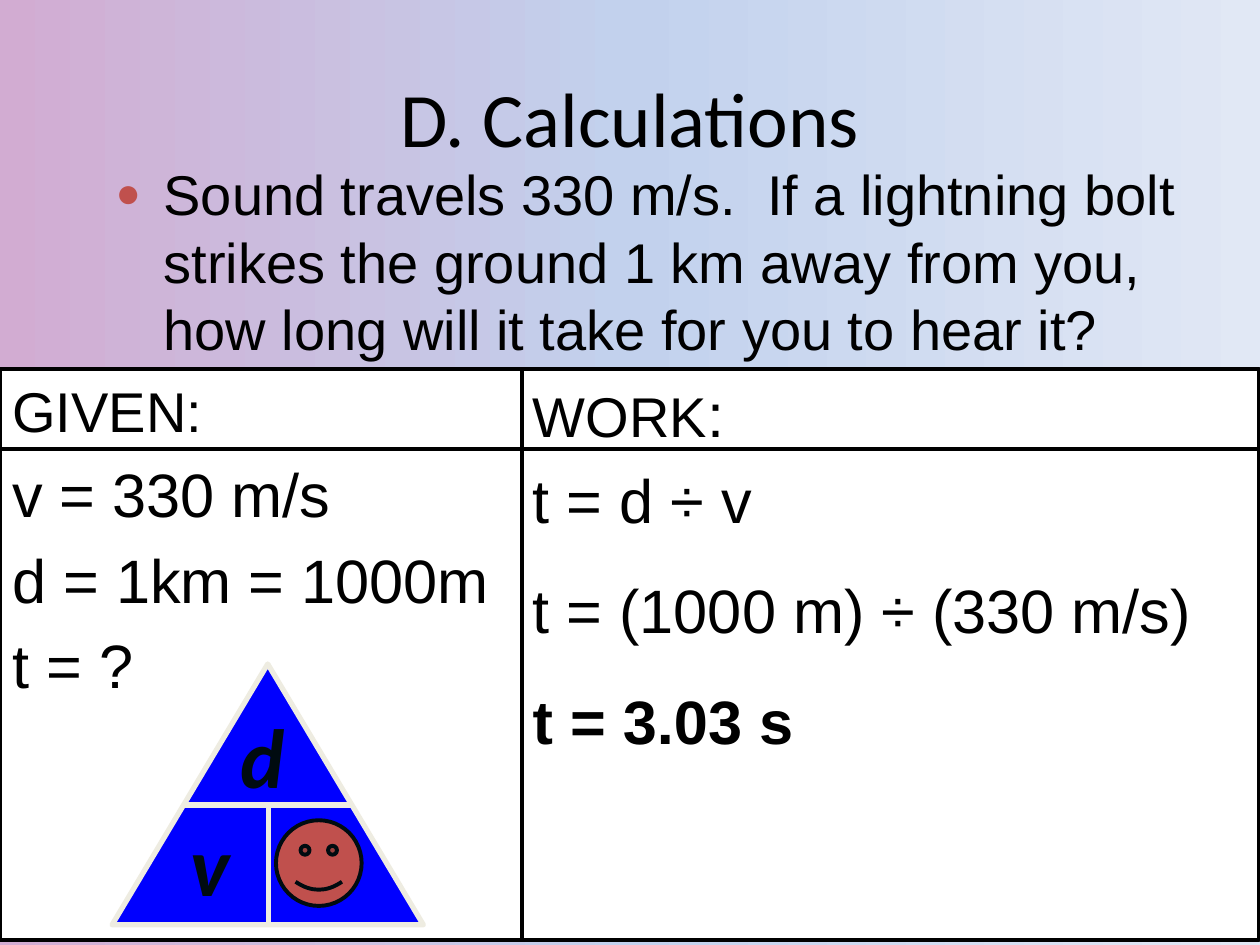
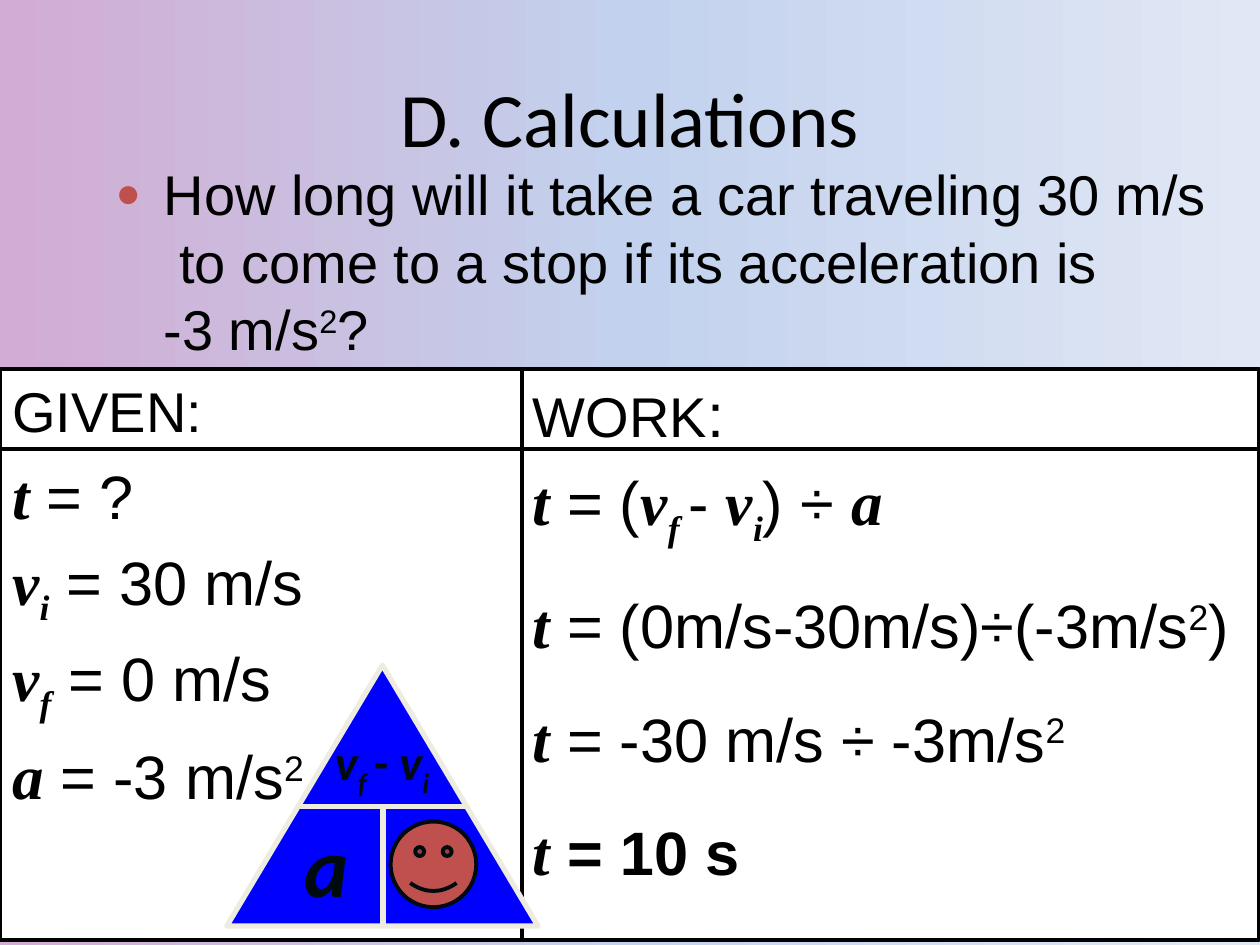
from copy import deepcopy

from pptx import Presentation
from pptx.dml.color import RGBColor
from pptx.enum.shapes import MSO_CONNECTOR, MSO_SHAPE
from pptx.enum.text import MSO_ANCHOR, MSO_AUTO_SIZE, PP_ALIGN
from pptx.oxml.ns import qn
from pptx.oxml.xmlchemy import OxmlElement
from pptx.util import Inches, Pt

STRAIGHT = MSO_CONNECTOR.STRAIGHT
RECTANGLE = MSO_SHAPE.RECTANGLE
TRIANGLE = MSO_SHAPE.ISOSCELES_TRIANGLE
SMILEY = MSO_SHAPE.SMILEY_FACE
MIDDLE = MSO_ANCHOR.MIDDLE
CENTER = PP_ALIGN.CENTER
FIT_SHAPE = MSO_AUTO_SIZE.SHAPE_TO_FIT_TEXT

BACKGROUND = [(0, "D2ACD2"), (0.5, "C2D1ED"), (1, "E1E8F5")]
BLACK, WHITE, BLUE = "000000", "FFFFFF", "0000FF"
RED, CREAM, INK = "C0504D", "EEECE1", "000B10"

PANEL_TOP, PANEL_BOTTOM = 2.93, 7.46
HEADER_BOTTOM = 3.56
COLUMN_SPLIT = 4.14

TITLE = dict(size=44, font="Calibri")
QUESTION = dict(size=32, font="Arial")
BODY = dict(size=35, font="Arial")
RESULT = dict(BODY, bold=True)
VARIABLE = dict(size=36, font="Times New Roman", bold=True, italic=True)
VELOCITY = dict(VARIABLE, size=35)
SUBSCRIPT = dict(VELOCITY, baseline=-25)
LABEL = dict(size=48, font="Calibri", bold=True, italic=True, color=INK)
SMALL_LABEL = dict(LABEL, size=28)
SMALL_SUBSCRIPT = dict(SMALL_LABEL, baseline=-25)

TIME, ACCELERATION = ("t", VARIABLE), ("a", VARIABLE)
V, INITIAL, FINAL = ("v", VELOCITY), ("i", SUBSCRIPT), ("f", SUBSCRIPT)
SQUARED = ("2", dict(BODY, baseline=30))


def rgb(value):
    return RGBColor.from_string(value)


def add_element(parent, tag, **attributes):
    element = OxmlElement(tag)
    for name, value in attributes.items():
        element.set(name, str(value))
    parent.append(element)
    return element


def paint_background(slide):
    fill = slide.background.fill
    fill.gradient()
    fill.gradient_angle = 0
    stop_list = slide.element.find(".//" + qn("a:gsLst"))
    stop_list.insert(1, deepcopy(stop_list[0]))
    for stop, (position, color) in zip(fill.gradient_stops, BACKGROUND):
        stop.position = position
        stop.color.rgb = rgb(color)


def add_run(paragraph, text, size, font, bold=False, italic=False,
            color=BLACK, baseline=0):
    """Add a styled run; baseline is a percentage shift."""
    run = paragraph.add_run()
    run.text = text
    run.font.size = Pt(size)
    run.font.name = font
    run.font.bold = bold
    run.font.italic = italic
    run.font.color.rgb = rgb(color)
    if baseline:
        run.font._element.set("baseline", str(baseline * 1000))


def fill_paragraph(paragraph, runs, style):
    """Write runs: plain strings take the given style, pairs bring their own."""
    for item in runs:
        if item == "\v":
            paragraph.add_line_break()
            continue
        text, run_style = (item, style) if isinstance(item, str) else item
        add_run(paragraph, text, **run_style)


def add_text(shapes, left, top, width, height, lines, style, wrap=True):
    box = shapes.add_textbox(Inches(left), Inches(top), Inches(width), Inches(height))
    frame = box.text_frame
    frame.word_wrap = wrap
    for index, runs in enumerate(lines):
        paragraph = frame.add_paragraph() if index else frame.paragraphs[0]
        fill_paragraph(paragraph, runs, style)
    return frame


def add_shape(shapes, kind, left, top, width, height, fill, line, line_width):
    shape = shapes.add_shape(kind, Inches(left), Inches(top), Inches(width), Inches(height))
    shape.shadow.inherit = False
    shape.fill.solid()
    shape.fill.fore_color.rgb = rgb(fill)
    shape.line.color.rgb = rgb(line)
    shape.line.width = Pt(line_width)


def add_line(shapes, x1, y1, x2, y2, color, width):
    line = shapes.add_connector(STRAIGHT, Inches(x1), Inches(y1), Inches(x2), Inches(y2))
    line.line.color.rgb = rgb(color)
    line.line.width = Pt(width)
    add_element(line._element.spPr, "a:effectLst")


def add_title(slide):
    frame = add_text(slide.shapes, 0.5, 0.3, 9, 1.25, [["D. Calculations"]], TITLE)
    frame.vertical_anchor = MIDDLE
    frame.paragraphs[0].alignment = CENTER


def add_question(slide, runs):
    frame = add_text(slide.shapes, 0.82, 1.22, 8.91, 1.72, [runs], QUESTION)
    properties = frame.paragraphs[0]._p.get_or_add_pPr()
    properties.set("marL", str(Inches(0.38)))
    properties.set("indent", str(-Inches(0.38)))
    add_element(add_element(properties, "a:buClr"), "a:srgbClr", val=RED)
    add_element(properties, "a:buSzPct", val=75000)
    add_element(properties, "a:buFont", typeface="Arial")
    add_element(properties, "a:buChar", char="●")


def add_column(slide, left, width, height, lines, step_spacing):
    """Add a heading and its lines; step_spacing (%) applies from the third line."""
    frame = add_text(slide.shapes, left, 2.94, width, height, lines, BODY)
    for index, paragraph in enumerate(frame.paragraphs):
        percent = step_spacing if index > 1 else 20
        spacing = add_element(paragraph._p.get_or_add_pPr(), "a:spcBef")
        add_element(spacing, "a:spcPct", val=percent * 1000)


def add_solution_panel(slide, given, work):
    shapes = slide.shapes
    add_shape(shapes, RECTANGLE, 0, PANEL_TOP, 9.99, PANEL_BOTTOM - PANEL_TOP,
              WHITE, BLACK, 2.25)
    add_column(slide, 0, 4.13, 2.84, [[("GIVEN:", QUESTION)]] + given, 20)
    add_column(slide, 4.13, 5.87, 3.86, [[("WORK", QUESTION), ":"]] + work, 60)
    add_line(shapes, COLUMN_SPLIT, PANEL_TOP, COLUMN_SPLIT, PANEL_BOTTOM, BLACK, 2.25)
    add_line(shapes, 0, HEADER_BOTTOM, 10, HEADER_BOTTOM, BLACK, 2.25)


def add_formula_triangle(slide, left, top, bottom_label):
    """Draw the triangle with a smiley over the unknown; return its group's shapes."""
    shapes = slide.shapes.add_group_shape().shapes
    bar = top + 1.12
    stem = left + 1.24
    add_shape(shapes, TRIANGLE, left, top, 2.47, 2.07, BLUE, CREAM, 3)
    add_line(shapes, left + 0.56, bar, left + 1.9, bar, CREAM, 3)
    add_line(shapes, stem, bar, stem, top + 2.06, CREAM, 3)
    add_label(shapes, left + 0.52, top + 1.13, 0.52, 0.9, [bottom_label])
    add_shape(slide.shapes, SMILEY, left + 1.3, top + 1.24, 0.68, 0.68, RED, INK, 2.25)
    return shapes


def add_label(shapes, left, top, width, height, runs, style=LABEL, wrap=False):
    frame = add_text(shapes, left, top, width, height, [runs], style, wrap)
    frame.auto_size = FIT_SHAPE


def add_problem_slide(presentation, question, given, work):
    slide = presentation.slides.add_slide(presentation.slide_layouts[6])
    paint_background(slide)
    add_title(slide)
    add_question(slide, question)
    add_solution_panel(slide, given, work)
    return slide


def add_sound_slide(presentation):
    slide = add_problem_slide(
        presentation,
        ["Sound travels 330 m/s.  If a lightning bolt strikes the ground "
         "1 km away from you, how long will it take for you to hear it?"],
        given=[["v = 330 m/s"], ["d = 1km = 1000m"], ["t = ?"]],
        work=[["t = d ÷ v"], ["t = (1000 m) ÷ (330 m/s)"], [("t = 3.03 s", RESULT)]],
    )
    triangle = add_formula_triangle(slide, 0.89, 5.27, "v")
    add_label(triangle, 1.81, 5.54, 0.53, 0.9, ["d"])


def add_braking_slide(presentation):
    slide = add_problem_slide(
        presentation,
        ["How long will it take a car traveling 30 m/s  to come to a stop "
         "if its acceleration is", "\v", "-3 m/s",
         ("2", dict(QUESTION, baseline=30)), "?"],
        given=[
            [TIME, " = ?"],
            [V, INITIAL, " = 30 m/s"],
            [V, FINAL, " = 0 m/s"],
            [ACCELERATION, " = -3 m/s", SQUARED],
        ],
        work=[
            [TIME, " = (", V, ("f ", SUBSCRIPT), "- ", V, INITIAL, ") ÷ ", ACCELERATION],
            [TIME, " = (0m/s-30m/s)÷(-3m/s", SQUARED, ")"],
            [TIME, " = -30 m/s ÷ -3m/s", SQUARED],
            [TIME, (" = 10 s", RESULT)],
        ],
    )
    triangle = add_formula_triangle(slide, 1.8, 5.28, "a")
    add_label(triangle, 2.56, 5.76, 1.02, 1.37,
              ["v", ("f ", SMALL_SUBSCRIPT), "- v", ("i", SMALL_SUBSCRIPT)],
              SMALL_LABEL, wrap=True)


def main():
    presentation = Presentation()
    presentation.slide_width = Inches(10)
    presentation.slide_height = Inches(7.5)
    add_sound_slide(presentation)
    add_braking_slide(presentation)
    presentation.save("out.pptx")


if __name__ == "__main__":
    main()
